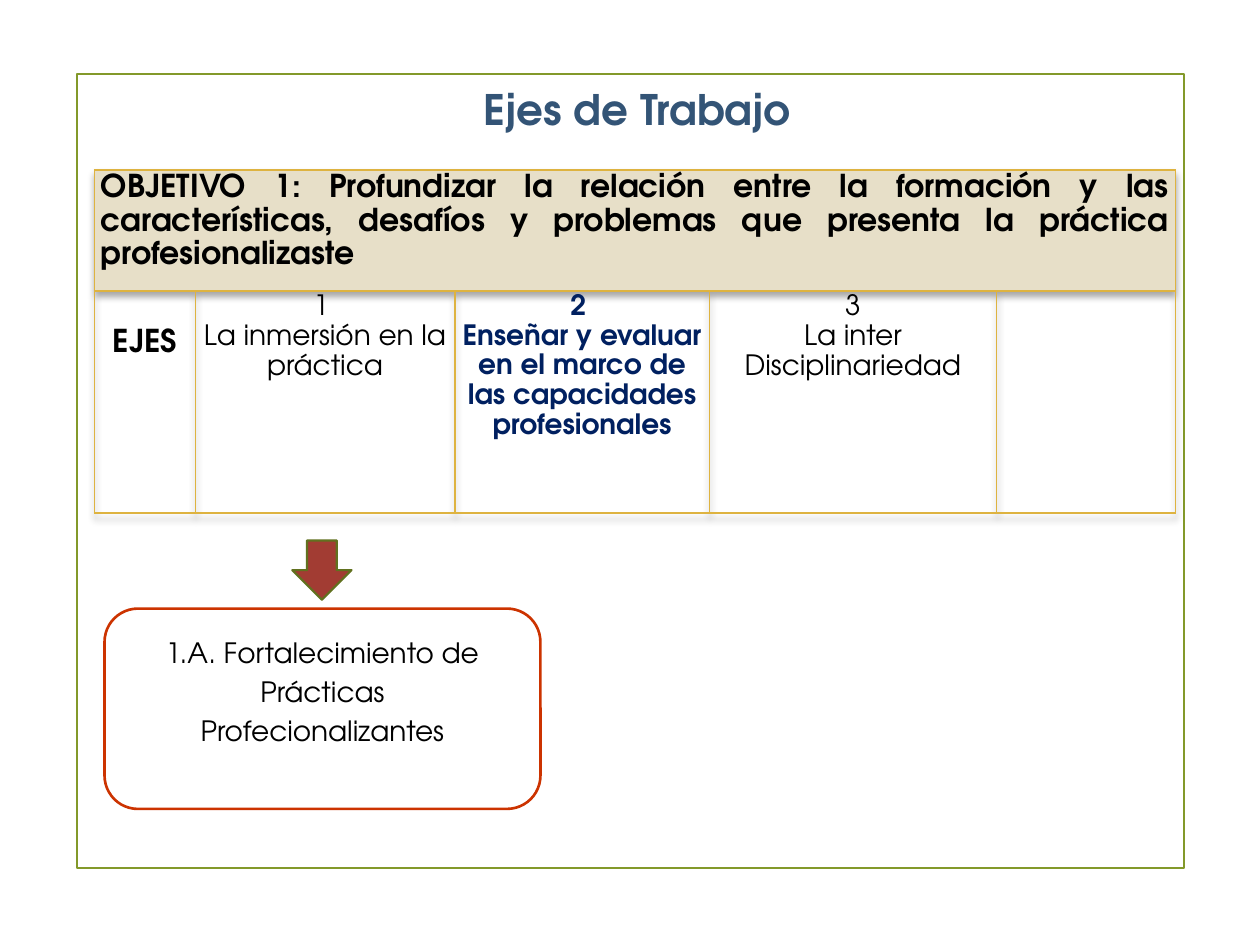
from lxml import etree
from pptx import Presentation
from pptx.dml.color import RGBColor
from pptx.enum import shapes, text
from pptx.oxml.ns import qn
from pptx.util import Inches, Pt

FONT = "TeX Gyre Adventor"
COLORS = {
    "title": "335476", "text": "000000", "accent": "002060",
    "frame": "83992A", "gold": "DEB340", "header": "E7DFC8",
    "box": "CC3300", "arrow": "A23C33", "arrow_line": "61711F",
}


def write(tf, lines, align, spacing, size, bold=False, color="text"):
    for i, line in enumerate(lines):
        p = tf.paragraphs[0] if i == 0 else tf.add_paragraph()
        p.alignment, p.line_spacing = align, spacing
        r = p.add_run()
        r.text = line
        for name, value in {"name": FONT, "size": Pt(size), "bold": bold}.items():
            setattr(r.font, name, value)
        r.font.color.rgb = RGBColor.from_string(COLORS[color])


def outline(s, kind, box, line, width, fill=None):
    sp = s.shapes.add_shape(kind, *(Inches(v) for v in box))
    sp.shadow.inherit = False
    if fill:
        sp.fill.solid()
        sp.fill.fore_color.rgb = RGBColor.from_string(COLORS[fill])
    else:
        sp.fill.background()
    sp.line.color.rgb = RGBColor.from_string(COLORS[line])
    sp.line.width = Pt(width)
    return sp


prs = Presentation()
prs.slide_width, prs.slide_height = Inches(10), Inches(7.5)
s = prs.slides.add_slide(prs.slide_layouts[5])
LEFT, CENTER, JUSTIFY = text.PP_ALIGN.LEFT, text.PP_ALIGN.CENTER, text.PP_ALIGN.JUSTIFY
KIND = shapes.MSO_SHAPE

# Page frame
outline(s, KIND.RECTANGLE, (0.61, 0.59, 8.79, 6.3), "frame", 1.25)

# Title
title = s.shapes.title
for name, value in {"left": 3.74, "top": 0.61, "width": 2.68, "height": 0.5}.items():
    setattr(title, name, Inches(value))
tf = title.text_frame
tf.word_wrap = False
tf.auto_size = text.MSO_AUTO_SIZE.NONE
tf.vertical_anchor = text.MSO_ANCHOR.TOP
write(tf, ["Ejes de Trabajo"], LEFT, 1.0, 24, True, "title")

# Table of work axes
widths, heights = [0.8, 2.06, 2.02, 2.28, 1.42], [0.96, 1.76]
table = s.shapes.add_table(2, 5, Inches(0.75), Inches(1.35),
                           Inches(sum(widths)), Inches(sum(heights))).table
table.first_row = table.horz_banding = False
for col, width in zip(table.columns, widths):
    col.width = Inches(width)
for row, height in zip(table.rows, heights):
    row.height = Inches(height)
table.cell(0, 0).merge(table.cell(0, 4))

# Soft shadow under the table
effects = etree.Element(qn("a:effectLst"))
shadow = etree.SubElement(effects, qn("a:outerShdw"), blurRad=str(Pt(4)),
                          dist=str(Pt(3)), dir="5400000", rotWithShape="0")
black = etree.SubElement(shadow, qn("a:srgbClr"), val=COLORS["text"])
etree.SubElement(black, qn("a:alpha"), val="35000")
table._tbl.tblPr.insert(0, effects)

# Cell margins, fills and borders
for cell in (c for row in table.rows for c in row.cells):
    cell.margin_left = cell.margin_right = Inches(0.05)
    cell.margin_top = cell.margin_bottom = 0
    tc_pr = cell._tc.get_or_add_tcPr()
    for side in ("a:lnL", "a:lnR", "a:lnT", "a:lnB"):
        ln = etree.SubElement(tc_pr, qn(side), w=str(Pt(1)))
        fill = etree.SubElement(ln, qn("a:solidFill"))
        etree.SubElement(fill, qn("a:srgbClr"), val=COLORS["gold"])
    cell.fill.background()
header = table.cell(0, 0)
header.fill.solid()
header.fill.fore_color.rgb = RGBColor.from_string(COLORS["header"])

# Table text
write(header.text_frame,
      ["OBJETIVO 1: Profundizar la relación entre la formación y las características, "
       "desafíos y problemas que presenta la práctica profesionalizaste"],
      JUSTIFY, 1.15, 18, True)
axes = [
    (["EJES"], 18, True, "text"),
    (["1 ", "La inmersión en la práctica"], 16, False, "text"),
    (["2 ", "Enseñar y evaluar en el marco de las capacidades profesionales"],
     16, True, "accent"),
    (["3", "La inter", "Disciplinariedad"], 16, False, "text"),
]
for i, (lines, size, bold, color) in enumerate(axes):
    write(table.cell(1, i).text_frame, lines, CENTER, 1.15, size, bold, color)
table.cell(1, 0).margin_top = Inches(0.27)

# Box for axis 1
box = outline(s, KIND.ROUNDED_RECTANGLE, (0.83, 4.83, 3.46, 1.59), "box", 1.5)
tf = box.text_frame
tf.word_wrap = True
tf.vertical_anchor = text.MSO_ANCHOR.TOP
tf.margin_left = tf.margin_right = Inches(0.22)
tf.margin_top = Inches(0.1)
write(tf, ["1.A. Fortalecimiento de Prácticas Profecionalizantes"], CENTER, 1.15, 16)

# Arrow from the table to the box
outline(s, KIND.DOWN_ARROW, (2.32, 4.29, 0.47, 0.47), "arrow_line", 1.25, "arrow")

prs.save("out.pptx")
